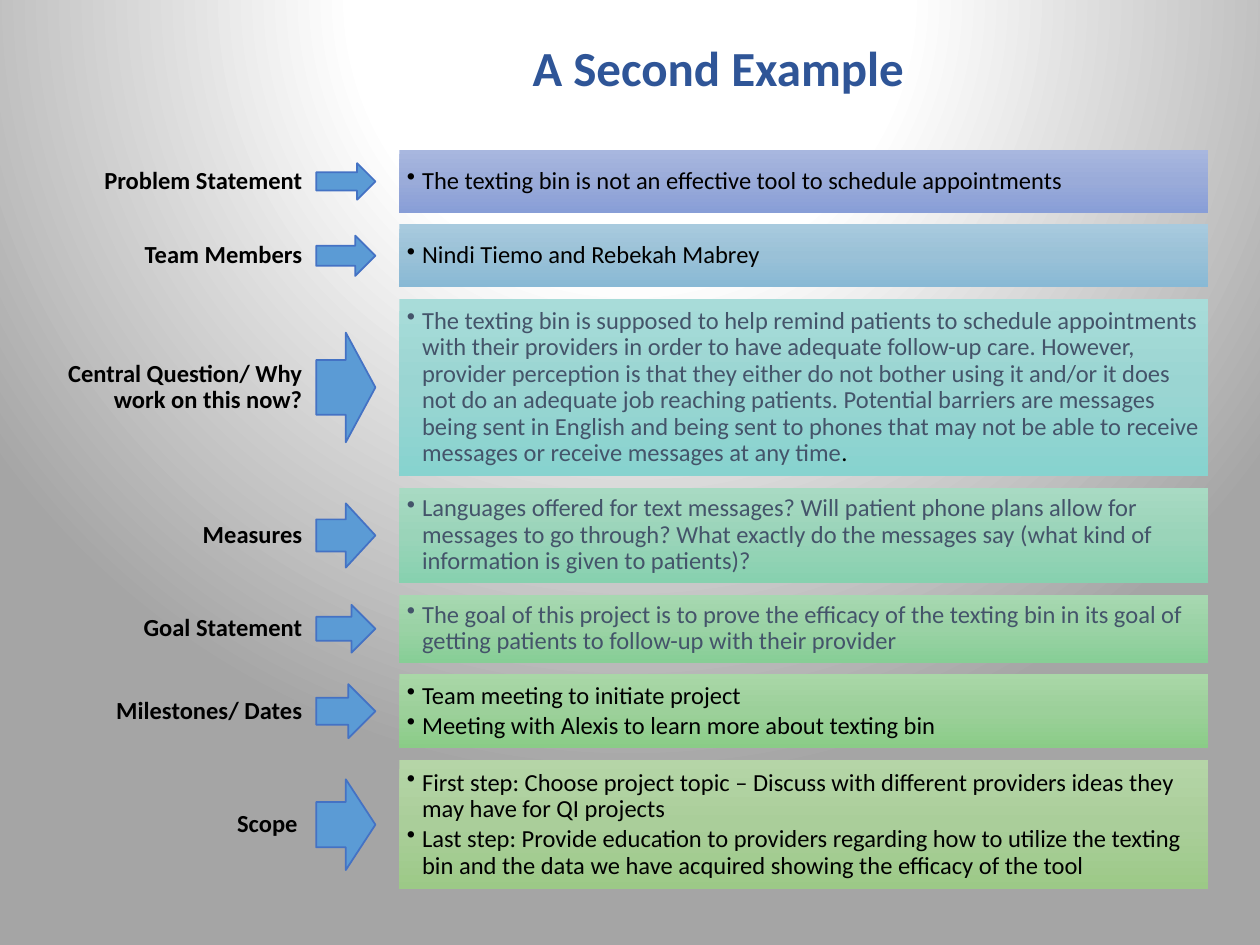
from lxml.etree import SubElement as Sub
from pptx import Presentation
from pptx.dml.color import RGBColor as Rgb
from pptx.enum.shapes import MSO_SHAPE as Geo
from pptx.enum.text import MSO_ANCHOR as Anchor, MSO_AUTO_SIZE as Fit, PP_ALIGN as Align
from pptx.oxml.ns import qn
from pptx.util import Inches as In, Pt

HUES = {
    "black": "000000", "slate": "44546A", "title": "2F5597",
    "arrow": "5B9BD5", "edge": "4472C4", "white": "FFFFFF", "gray": "A5A5A5",
}
# Columns as (left, width); rows share one gap
COLS = {"label": (0.15, 2.36), "arrow": (2.51, 0.47), "body": (3.17, 6.42)}
TOP, GAP, LABEL = 1.19, 0.09, 0.5

# Label, row height, arrow height, gradient, text colour, bullets
ROWS = [
    ("Problem Statement", 0.5, 0.29, ("A8B7DF", "9AABD9", "889ED7"), "black",
     ["The texting bin is not an effective tool to schedule appointments"]),
    ("Team Members", 0.5, 0.32, ("A8CADE", "9AC1D7", "88B9D5"), "black",
     ["Nindi Tiemo and Rebekah Mabrey"]),
    ("Central Question/ Why work on this now?", 1.41, 0.87,
     ("A8DCD9", "9AD5D2", "87D3CF"), "slate",
     [["The texting bin is supposed to help remind patients to schedule "
       "appointments with their providers in order to have adequate follow-up "
       "care. However, provider perception is that they either do not bother "
       "using it and/or it does not do an adequate job reaching patients. "
       "Potential barriers are messages being sent in English and being sent "
       "to phones that may not be able to receive messages or receive messages "
       "at any time", (".", {"hue": "black"})]]),
    ("Measures", 0.76, 0.51, ("A8DAC3", "9AD4B9", "87D1AF"), "slate",
     ["Languages offered for text messages? Will patient phone plans allow for "
      "messages to go through? What exactly do the messages say (what kind of "
      "information is given to patients)?"]),
    ("Goal Statement", 0.54, 0.38, ("A7D8B1", "9AD2A5", "87CE96"), "slate",
     ["The goal of this project is to prove the efficacy of the texting bin in "
      "its goal of getting patients to follow-up with their provider"]),
    ("Milestones/ Dates", 0.59, 0.43, ("A9D7A7", "9CD09A", "8ACC87"), "black",
     ["Team meeting to initiate project",
      "Meeting with Alexis to learn more about texting bin"]),
    (["Scope", (" ", {"size": 12, "bold": False})], 1.03, 0.72,
     ("B5D5A7", "AACE9A", "9CC987"), "black",
     ["First step: Choose project topic – Discuss with different providers "
      "ideas they may have for QI projects",
      "Last step: Provide education to providers regarding how to utilize the "
      "texting bin and the data we have acquired showing the efficacy of the tool"]),
]


def shade(fill, node, stops):
    """Set a gradient from (share, colour) pairs and return its element."""
    fill.gradient()
    grad = next(node.iter(qn("a:gradFill")))
    ramp = grad.find(qn("a:gsLst"))
    for old in list(ramp):
        ramp.remove(old)
    for pos, hue in stops:
        stop = Sub(ramp, qn("a:gs"), pos=str(pos * 1000))
        Sub(stop, qn("a:srgbClr"), val=hue)
    return grad


def backdrop(slide):
    stops = [(0, HUES["white"]), (35, HUES["white"]), (100, HUES["gray"])]
    grad = shade(slide.background.fill, slide.element, stops)
    grad.remove(grad.find(qn("a:lin")))
    path = Sub(grad, qn("a:path"), path="circle")
    Sub(path, qn("a:fillToRect"), l="50000", t="-80000", r="50000", b="180000")


def style(font, hue, size, bold):
    font.name, font.size, font.bold = "Calibri", Pt(size), bold
    font.color.rgb = Rgb.from_string(HUES[hue])


def bullet(para):
    props = para._p.get_or_add_pPr()
    props.set("marL", str(In(0.12)))
    props.set("indent", str(In(-0.12)))
    para.space_after = Pt(2)
    Sub(props, qn("a:buChar"), char="•")


def text(slide, box, paras, hue="black", size=14, bold=False, align=Align.LEFT,
         anchor=Anchor.MIDDLE, pad=(0.1, 0.05), lead=0.9, dots=False, fit=Fit.NONE):
    """Add a text box; a paragraph is a string or a list of runs."""
    frame = slide.shapes.add_textbox(*map(In, box)).text_frame
    frame.word_wrap, frame.auto_size, frame.vertical_anchor = True, fit, anchor
    frame.margin_left = frame.margin_right = In(pad[0])
    frame.margin_top = frame.margin_bottom = In(pad[1])
    for i, runs in enumerate(paras):
        para = frame.add_paragraph() if i else frame.paragraphs[0]
        para.alignment, para.line_spacing = align, lead
        if dots:
            bullet(para)
        for item in [runs] if isinstance(runs, str) else runs:
            words, diff = (item, {}) if isinstance(item, str) else item
            run = para.add_run()
            run.text = words
            style(run.font, **{"hue": hue, "size": size, "bold": bold, **diff})


def arrow(slide, box):
    shape = slide.shapes.add_shape(Geo.RIGHT_ARROW, *map(In, box))
    shape.shadow.inherit = False
    shape.fill.solid()
    shape.fill.fore_color.rgb = Rgb.from_string(HUES["arrow"])
    shape.line.color.rgb = Rgb.from_string(HUES["edge"])
    shape.line.width = Pt(1)


def band(slide, box, hues):
    shape = slide.shapes.add_shape(Geo.RECTANGLE, *map(In, box))
    shape.shadow.inherit = False
    shape.line.fill.background()
    grad = shade(shape.fill, shape.element, zip((0, 50, 100), hues))
    grad.find(qn("a:lin")).set("ang", "5400000")


def cell(col, mid, high):
    """Box in a column, centred on a row's middle."""
    left, wide = COLS[col]
    return left, mid - high / 2, wide, high


def main():
    deck = Presentation()
    deck.slide_width, deck.slide_height = In(10), In(7.5)
    slide = deck.slides.add_slide(deck.slide_layouts[6])
    backdrop(slide)

    # One row per topic: label, arrow, band with bullets
    top = TOP
    for label, high, tip, hues, hue, points in ROWS:
        mid = top + high / 2
        text(slide, cell("label", mid, LABEL), [label], bold=True,
             align=Align.RIGHT, pad=(0.11, 0.04))
        arrow(slide, cell("arrow", mid, tip))
        body = cell("body", mid, high)
        band(slide, body, hues)
        text(slide, body, points, hue=hue, pad=(0.06, 0.06), dots=True)
        top += high + GAP

    # Title
    text(slide, (3.33, 0.25, 4.74, 0.57), ["A Second Example"], hue="title",
         size=28, bold=True, align=Align.CENTER, anchor=Anchor.TOP, lead=1.0,
         fit=Fit.SHAPE_TO_FIT_TEXT)
    deck.save("out.pptx")


if __name__ == "__main__":
    main()
